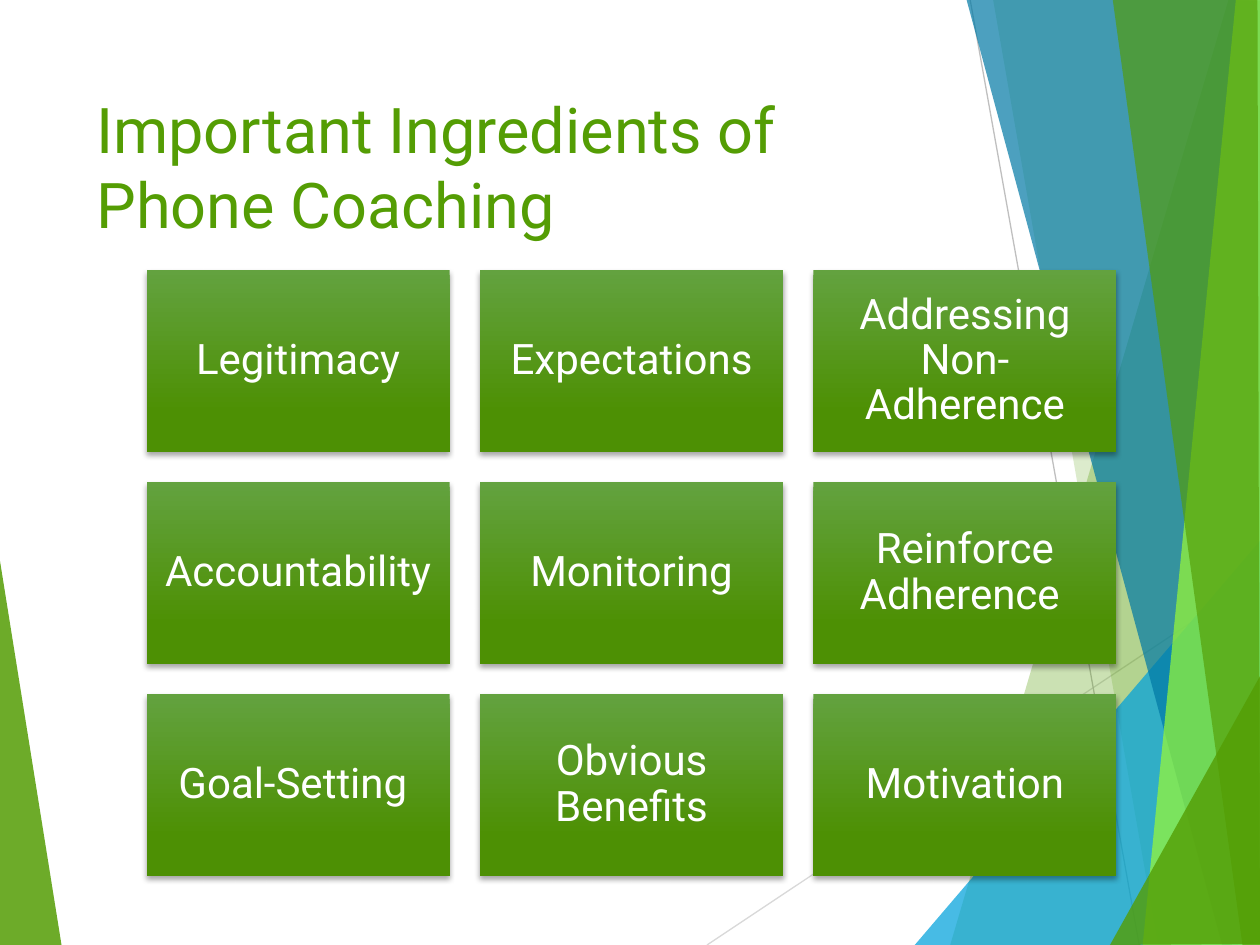
from lxml.etree import SubElement
from pptx import Presentation
from pptx.dml.color import RGBColor
from pptx.enum.shapes import MSO_CONNECTOR, MSO_SHAPE
from pptx.enum.text import MSO_ANCHOR, PP_ALIGN
from pptx.oxml.ns import qn
from pptx.util import Pt

TITLE = ["Important Ingredients of", "Phone Coaching"]
INGREDIENTS = [
    ["Legitimacy", "Expectations", "Addressing Non-Adherence"],
    ["Accountability", "Monitoring", "Reinforce Adherence "],
    ["Goal-Setting ", "Obvious Benefits", "Motivation"],
]
LEFT_FACET = ("549D04", 85, [(-0.7, 316), (35.3, 540.7), (-0.7, 540)])
RAYS = [("D9D9D9", (404, 540), (720.7, 329)), ("BFBFBF", (554.4, 0), (651, 540))]
RIGHT_FACETS = [
    ("549D04", 30, [(702, 0), (543, 540), (721.4, 540.7), (720.7, 0.7)]),
    ("549D04", 20, [(567.4, -0.7), (661.7, 540), (720.7, 540), (720.7, -0.7)]),
    ("00A1DC", 72, [(522.7, 540), (720, 309), (720.7, 540)]),
    ("0079A5", 70, [(552.2, -0.7), (698.4, 540), (720.7, 539.3), (720.7, -0.7)]),
    ("9BFA33", 70, [(706.3, -0.7), (653, 540), (720.7, 540), (720, -0.7)]),
    ("549D04", 65, [(635.8, -0.7), (710, 540), (720, 540), (718.6, -0.7)]),
    ("549D04", 80, [(634.3, 540), (720.7, 385.2), (720.7, 539.3)]),
]
TILE_LEFT, TILE_TOP = 83.8, 154.2
TILE_WIDTH, TILE_HEIGHT, TILE_GAP = 173.2, 103.9, 17.3


def color(value):
    return RGBColor.from_string(value)


def apply(target, values):
    for key, value in values.items():
        setattr(target, key, value)


class FacetSlide:
    """Draws slide elements in the green facet style, measured in points."""

    font = "Roboto"
    title_color = "549D04"
    tile_stops = [(0, "63A23F"), (0.78, "4D9004")]
    tile_frame = {
        "word_wrap": True,
        "vertical_anchor": MSO_ANCHOR.MIDDLE,
        **{f"margin_{side}": Pt(7.2) for side in ("left", "top", "right", "bottom")},
    }

    def __init__(self, slide):
        self.shapes = slide.shapes

    def add_lines(self, paragraph, lines, size, ink):
        for index, line in enumerate(lines):
            if index:
                paragraph.add_line_break()
            run = paragraph.add_run()
            run.text = line
            apply(run.font, {"name": self.font, "size": Pt(size)})
            run.font.color.rgb = color(ink)

    def facet(self, tint, opacity, corners):
        start, *rest = [(Pt(x), Pt(y)) for x, y in corners]
        builder = self.shapes.build_freeform(*start)
        builder.add_line_segments(rest, close=True)
        facet = builder.convert_to_shape()
        facet.shadow.inherit = False
        facet.fill.solid()
        facet.fill.fore_color.rgb = color(tint)
        facet.line.fill.background()
        tint_node = facet._element.spPr.find(qn("a:solidFill"))[0]
        SubElement(tint_node, qn("a:alpha"), val=str(opacity * 1000))

    def ray(self, tint, start, end):
        ends = [Pt(length) for length in (*start, *end)]
        ray = self.shapes.add_connector(MSO_CONNECTOR.STRAIGHT, *ends)
        ray.line.width = Pt(0.75)
        ray.line.color.rgb = color(tint)
        SubElement(ray._element.spPr, qn("a:effectLst"))

    def tile(self, label, left, top):
        box = [Pt(length) for length in (left, top, TILE_WIDTH, TILE_HEIGHT)]
        tile = self.shapes.add_shape(MSO_SHAPE.RECTANGLE, *box)
        tile.fill.gradient()
        tile.fill.gradient_angle = 270
        for stop, (position, tint) in zip(tile.fill.gradient_stops, self.tile_stops):
            stop.position = position
            stop.color.rgb = color(tint)
        tile.line.fill.background()
        self.drop_shadow(tile)
        apply(tile.text_frame, self.tile_frame)
        paragraph = tile.text_frame.paragraphs[0]
        apply(paragraph, {"alignment": PP_ALIGN.CENTER, "line_spacing": 0.9})
        self.add_lines(paragraph, [label], 24, "FFFFFF")

    def drop_shadow(self, tile):
        tile.shadow.inherit = False
        effects = tile._element.spPr.find(qn("a:effectLst"))
        shadow = SubElement(
            effects, qn("a:outerShdw"), blurRad=str(Pt(3)), dist=str(Pt(2)),
            dir="5400000", rotWithShape="0",
        )
        shade = SubElement(shadow, qn("a:srgbClr"), val="000000")
        SubElement(shade, qn("a:alpha"), val="35000")

    def title(self, lines, left, top, width, height):
        box = [Pt(length) for length in (left, top, width, height)]
        frame = self.shapes.add_textbox(*box).text_frame
        apply(frame, {"word_wrap": True, "vertical_anchor": MSO_ANCHOR.TOP})
        self.add_lines(frame.paragraphs[0], lines, 36, self.title_color)


def main():
    presentation = Presentation()
    apply(presentation, {"slide_width": Pt(720), "slide_height": Pt(540)})
    page = FacetSlide(presentation.slides.add_slide(presentation.slide_layouts[6]))
    page.facet(*LEFT_FACET)
    for ray in RAYS:
        page.ray(*ray)
    for facet in RIGHT_FACETS:
        page.facet(*facet)
    for row, labels in enumerate(INGREDIENTS):
        for column, label in enumerate(labels):
            page.tile(
                label,
                TILE_LEFT + column * (TILE_WIDTH + TILE_GAP),
                TILE_TOP + row * (TILE_HEIGHT + TILE_GAP),
            )
    page.title(TITLE, 48, 48, 500, 104)
    presentation.save("out.pptx")


if __name__ == "__main__":
    main()
